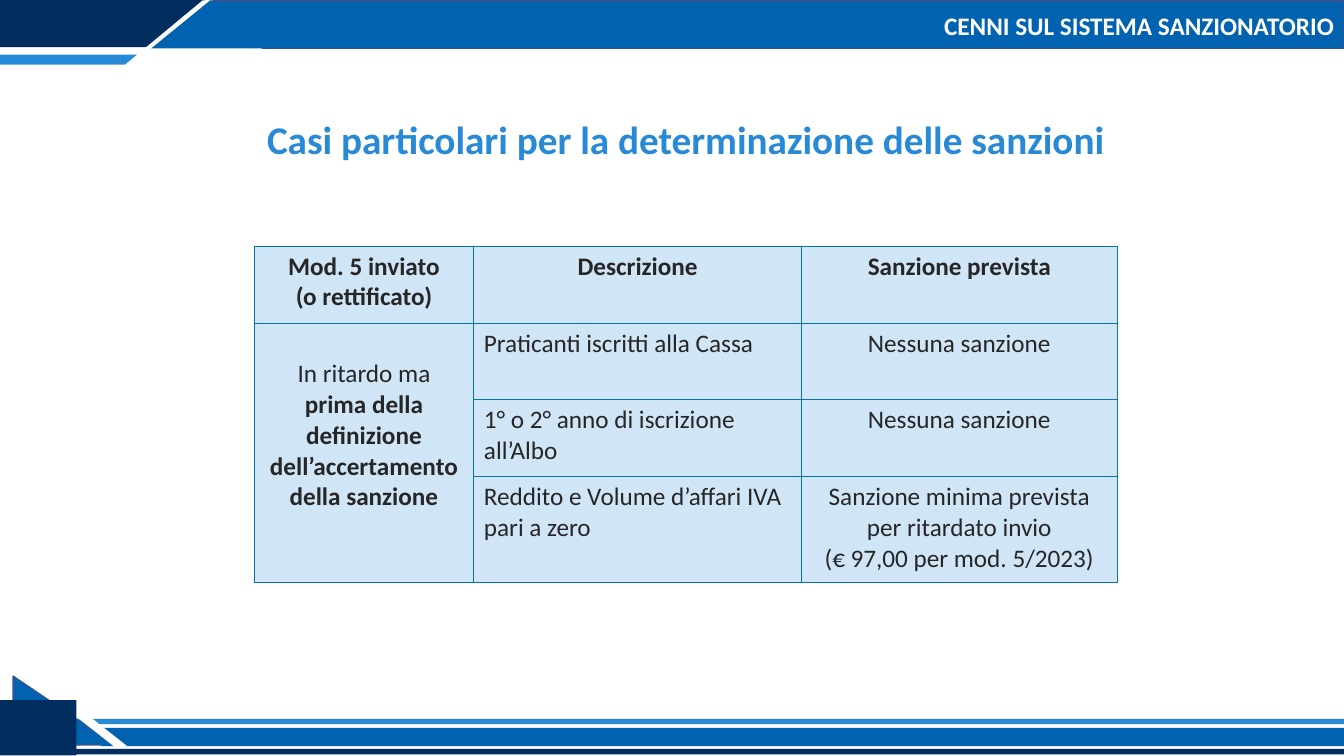
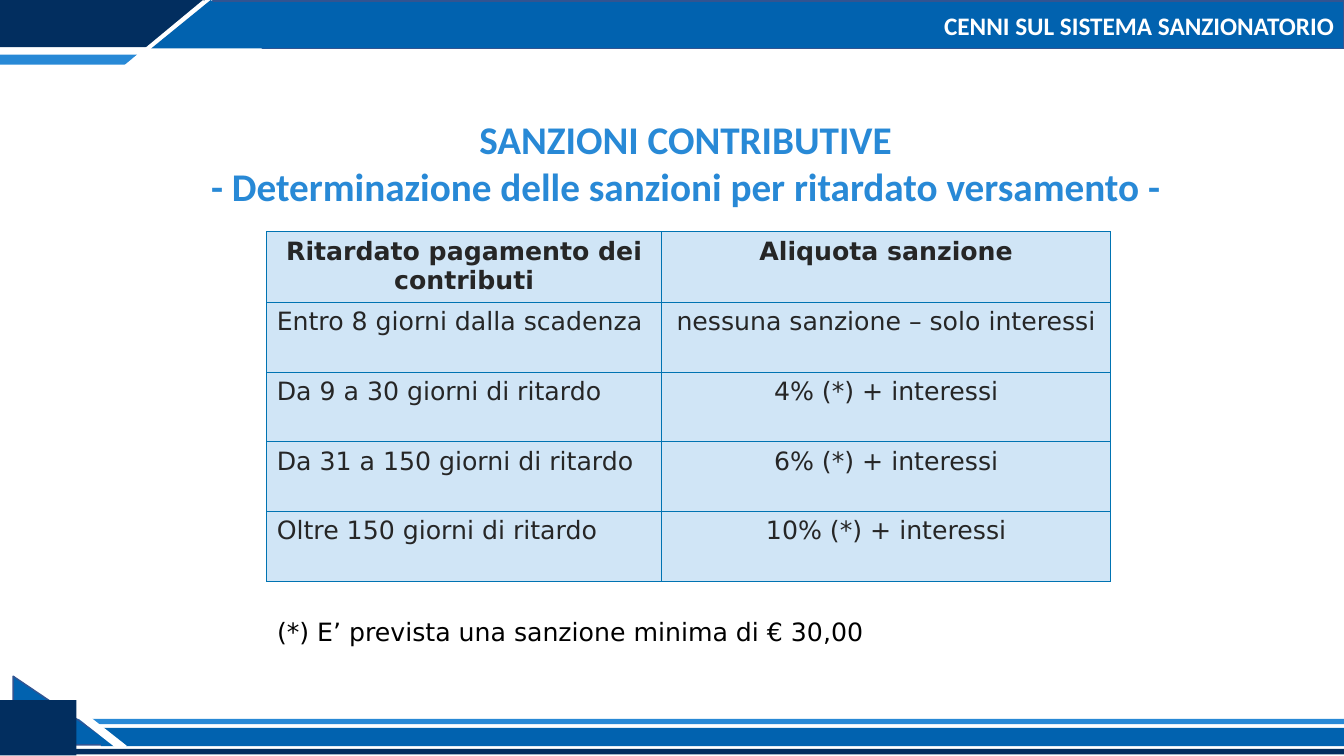
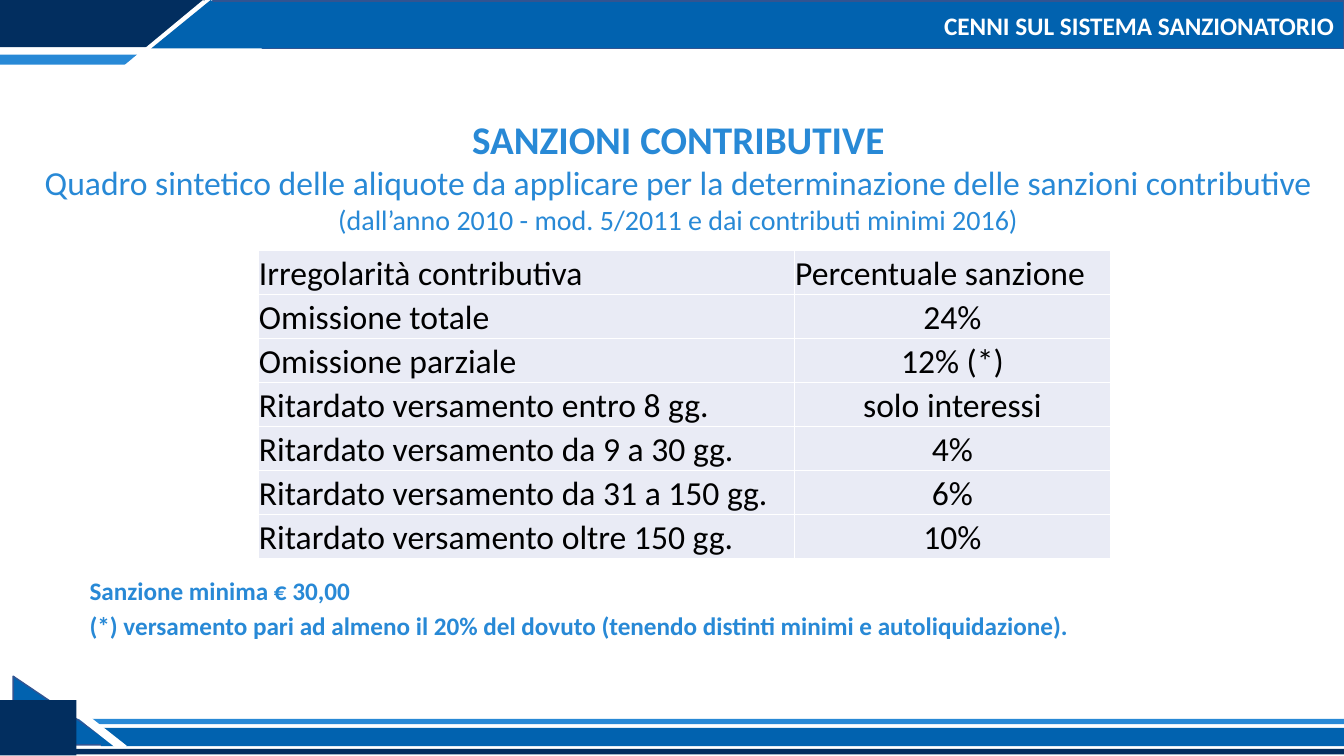
from dataclasses import dataclass

from lxml import etree
from pptx import Presentation
from pptx.dml.color import RGBColor
from pptx.enum.shapes import MSO_CONNECTOR, MSO_SHAPE
from pptx.enum.text import MSO_ANCHOR, PP_ALIGN
from pptx.oxml.ns import qn
from pptx.util import Pt


@dataclass(frozen=True)
class Theme:
    navy: str = "022E5F"
    blue: str = "0162AF"
    sky: str = "2889D6"
    outline: str = "325491"
    white: str = "FFFFFF"
    black: str = "000000"
    ink: str = "262626"
    pale: str = "D0E5F6"
    grid: str = "0073B2"
    lilac: str = "E9EBF5"
    sans: str = "Calibri"
    wide: str = "DejaVu Sans"
    body: int = 18
    note: int = 20
    large: int = 24
    heading: int = 28


T = Theme()
LEFT, CENTER, RIGHT, JUSTIFY = PP_ALIGN.LEFT, PP_ALIGN.CENTER, PP_ALIGN.RIGHT, PP_ALIGN.JUSTIFY
RECT, TRIANGLE, RT_TRIANGLE = MSO_SHAPE.RECTANGLE, MSO_SHAPE.ISOSCELES_TRIANGLE, MSO_SHAPE.RIGHT_TRIANGLE

WIDTH, HEIGHT = 960, 540
SECTION = "CENNI SUL SISTEMA SANZIONATORIO"

# preset, (left, top, width, height), fill, outline
HEADER = [
    (RECT, (152, 0.7, 808, 33.8), T.blue, T.outline),
    (RECT, (0, 39, 98, 7.2), T.sky, None),
    (RECT, (0, 0, 146, 33.8), T.navy, None),
    (TRIANGLE, (88.6, 0, 113, 46.8), T.white, None),
    (TRIANGLE, (108, 0, 85, 34.6), T.blue, None),
]
FOOTER = [
    (RECT, (54.5, 513.5, 905.5, 3.8), T.sky, None),
    (RT_TRIANGLE, (9.4, 483, 72.6, 49), T.blue, T.outline),
    (RECT, (72, 520, 888, 13), T.blue, None),
]
FOOTER_SLASH = (88.6, 535, 54.7, 508.3)
FOOTER_FRONT = [
    (RECT, (0, 500, 54.5, 39.6), T.navy, None),
    (RECT, (46.8, 535, 913.2, 3.8), T.navy, None),
]

# A paragraph is a string or a list of (text, format) runs.
SPECIAL_CASES = [
    [["Mod. 5 inviato", "(o rettificato)"], ["Descrizione"], ["Sanzione prevista"]],
    [[[("In ritardo ma ", {}),
       ("prima della definizione dell’accertamento della sanzione", {"bold": True})]],
     ["Praticanti iscritti alla Cassa"], ["Nessuna sanzione"]],
    [[], ["1° o 2° anno di iscrizione all’Albo"], ["Nessuna sanzione"]],
    [[], ["Reddito e Volume d’affari IVA pari a zero"],
     ["Sanzione minima prevista per ritardato invio", "(€ 97,00 per mod. 5/2023)"]],
]
LATE_PAYMENT = [
    [["Ritardato pagamento dei contributi"], ["Aliquota sanzione"]],
    [["Entro 8 giorni dalla scadenza"], ["nessuna sanzione – solo interessi"]],
    [["Da 9 a 30 giorni di ritardo"], ["4% (*) + interessi"]],
    [["Da 31 a 150 giorni di ritardo"], ["6% (*) + interessi"]],
    [["Oltre 150 giorni di ritardo"], ["10% (*) + interessi"]],
]
RATES = [
    [["Irregolarità contributiva"], ["Percentuale sanzione"]],
    [["Omissione totale"], ["24%"]],
    [["Omissione parziale"], ["12% (*)"]],
    [["Ritardato versamento entro 8 gg."], ["solo interessi"]],
    [["Ritardato versamento da 9 a 30 gg."], ["4%"]],
    [["Ritardato versamento da 31 a 150 gg."], ["6%"]],
    [["Ritardato versamento oltre 150 gg."], ["10%"]],
]
RATES_TITLE = [
    "SANZIONI CONTRIBUTIVE",
    [("Quadro sintetico delle aliquote da applicare per la determinazione delle sanzioni contributive",
      {"size": T.large, "bold": False})],
    [("(dall’anno 2010 - mod. 5/2011 e dai contributi minimi 2016)",
      {"size": T.note, "bold": False})],
]
RATES_NOTES = [
    "Sanzione minima € 30,00",
    [("(*) versamento pari ad almeno il 20% del dovuto (tenendo distinti minimi e autoliquidazione).",
      {"align": JUSTIFY, "before": 3.6})],
]


def rgb(color):
    return RGBColor.from_string(color)


def write(tf, paragraphs, **fmt):
    """Fill a text frame; a run's own format overrides the shared one."""
    base = dict(size=T.body, font=T.sans, color=T.ink, bold=False,
                align=LEFT, before=0, spacing=1.0) | fmt
    tf.word_wrap = True
    for i, runs in enumerate(paragraphs):
        p = tf.paragraphs[0] if i == 0 else tf.add_paragraph()
        if isinstance(runs, str):
            runs = [(runs, {})]
        lead = base | runs[0][1]
        p.alignment = lead["align"]
        p.space_before = Pt(lead["before"])
        p.line_spacing = lead["spacing"]
        for text, own in runs:
            f = base | own
            r = p.add_run()
            r.text = text
            r.font.size, r.font.name, r.font.bold = Pt(f["size"]), f["font"], f["bold"]
            r.font.color.rgb = rgb(f["color"])


def add_text(s, box, paragraphs, anchor=MSO_ANCHOR.TOP, **fmt):
    tf = s.shapes.add_textbox(*map(Pt, box)).text_frame
    tf.vertical_anchor = anchor
    write(tf, paragraphs, **fmt)


def add_heading(s, paragraphs, left=75, width=829.4, height=75):
    add_text(s, (left, 78.5, width, height), paragraphs,
             size=T.heading, color=T.sky, bold=True, align=CENTER)


def add_shapes(s, items):
    for preset, box, fill, outline in items:
        sp = s.shapes.add_shape(preset, *map(Pt, box))
        sp.shadow.inherit = False
        sp.fill.solid()
        sp.fill.fore_color.rgb = rgb(fill)
        if outline:
            sp.line.color.rgb = rgb(outline)
            sp.line.width = Pt(1)
        else:
            sp.line.fill.background()


def add_slide(prs):
    """Add a blank slide with the shared bands and section title."""
    s = prs.slides.add_slide(prs.slide_layouts[6])
    add_shapes(s, HEADER + FOOTER)
    slash = s.shapes.add_connector(MSO_CONNECTOR.STRAIGHT, *map(Pt, FOOTER_SLASH))
    slash.line.color.rgb = rgb(T.white)
    slash.line.width = Pt(6)
    etree.SubElement(slash.element.spPr, qn("a:effectLst"))
    add_shapes(s, FOOTER_FRONT)
    add_text(s, (142.6, 2.9, 817.4, 33.8), [SECTION], anchor=MSO_ANCHOR.MIDDLE,
             color=T.white, bold=True, align=RIGHT, spacing=0.9)
    return s


def set_borders(cell, color, width):
    tc_pr = cell._tc.get_or_add_tcPr()
    for side in ("lnL", "lnR", "lnT", "lnB"):
        ln = etree.SubElement(tc_pr, qn(f"a:{side}"), w=str(Pt(width)))
        fill = etree.SubElement(ln, qn("a:solidFill"))
        etree.SubElement(fill, qn("a:srgbClr"), val=color)


def add_grid(s, left, top, cols, heights, rows, cell_format, fill=T.pale,
             border=(T.grid, 0.75), margins=(7.2, 3.6, 7.2, 3.6), anchor=MSO_ANCHOR.TOP):
    """Add a table; cell_format(row, col) gives the text format of a cell."""
    table = s.shapes.add_table(len(rows), len(cols), Pt(left), Pt(top),
                               Pt(sum(cols)), Pt(sum(heights))).table
    table.first_row = table.horz_banding = False
    for col, width in zip(table.columns, cols):
        col.width = Pt(width)
    for i, (row, height) in enumerate(zip(rows, heights)):
        table.rows[i].height = Pt(height)
        for j, paragraphs in enumerate(row):
            cell = table.cell(i, j)
            (cell.margin_left, cell.margin_top,
             cell.margin_right, cell.margin_bottom) = map(Pt, margins)
            cell.vertical_anchor = anchor
            set_borders(cell, *border)
            cell.fill.solid()
            cell.fill.fore_color.rgb = rgb(fill)
            write(cell.text_frame, paragraphs, **cell_format(i, j))
    return table


def special_cases_slide(prs):
    s = add_slide(prs)
    add_heading(s, ["Casi particolari per la determinazione delle sanzioni"], height=41)
    table = add_grid(
        s, 181.5, 175.7, (157, 234, 225.5), (55, 55, 55, 75.4), SPECIAL_CASES,
        lambda i, j: dict(bold=i == 0, align=LEFT if i and j == 1 else CENTER))
    timing = table.cell(1, 0)
    timing.merge(table.cell(3, 0))
    timing.margin_top = Pt(25.6)


def late_payment_slide(prs):
    s = add_slide(prs)
    add_heading(s, ["SANZIONI CONTRIBUTIVE",
                    "- Determinazione delle sanzioni per ritardato versamento -"])
    add_grid(
        s, 190.5, 165.6, (282, 321), [49.8] * len(LATE_PAYMENT), LATE_PAYMENT,
        lambda i, j: dict(font=T.wide, bold=i == 0, align=LEFT if i and j == 0 else CENTER))
    add_text(s, (190.8, 437, 602, 29), ["(*) E’ prevista una sanzione minima di € 30,00"],
             font=T.wide, color=T.black)


def rates_slide(prs):
    s = add_slide(prs)
    add_grid(
        s, 184.3, 178.9, (383, 226), [31.43] * len(RATES), RATES,
        lambda i, j: dict(size=T.large, color=T.black, align=CENTER if i and j else LEFT),
        fill=T.lilac, border=(T.white, 1), margins=(0.7, 0.7, 0.7, 0), anchor=MSO_ANCHOR.BOTTOM)
    add_heading(s, RATES_TITLE, left=24.5, width=920, height=94.3)
    add_text(s, (56.9, 407.5, 853, 55.4), RATES_NOTES, color=T.sky, bold=True)


def main():
    prs = Presentation()
    prs.slide_width, prs.slide_height = Pt(WIDTH), Pt(HEIGHT)
    special_cases_slide(prs)
    late_payment_slide(prs)
    rates_slide(prs)
    prs.save("out.pptx")


if __name__ == "__main__":
    main()
